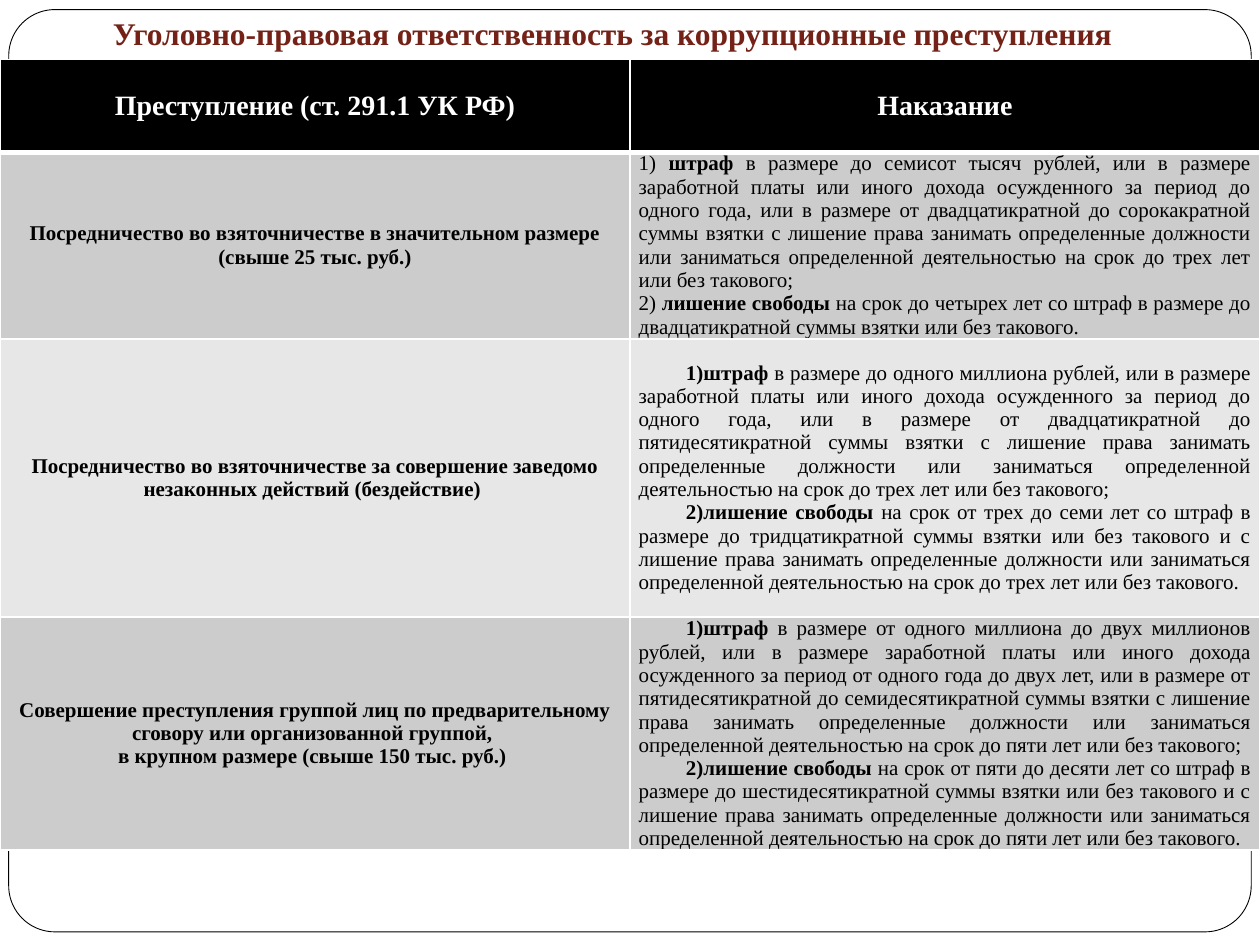
from lxml import etree
from pptx import Presentation
from pptx.dml.color import RGBColor
from pptx.enum.shapes import MSO_SHAPE
from pptx.enum.text import MSO_ANCHOR, PP_ALIGN
from pptx.oxml.ns import qn
from pptx.util import Pt

ROUND = MSO_SHAPE.ROUNDED_RECTANGLE
MIDDLE, BOTTOM = MSO_ANCHOR.MIDDLE, MSO_ANCHOR.BOTTOM
CENTER, JUSTIFY = PP_ALIGN.CENTER, PP_ALIGN.JUSTIFY
FONT = "Times New Roman"
BLACK = RGBColor(0, 0, 0)
WHITE = RGBColor(255, 255, 255)
MAROON = RGBColor(0x74, 0x22, 0x17)
BANDS = [RGBColor(0xCC, 0xCC, 0xCC), RGBColor(0xE7, 0xE7, 0xE7)]

TITLE = "Уголовно-правовая ответственность за коррупционные преступления"
HEADS = ["Преступление (ст. 291.1 УК РФ)", "Наказание"]
HEIGHTS = [53, 103, 159, 129]
BAN = "с лишение права занимать определенные должности или заниматься определенной деятельностью на срок до"
FINE, JAIL = "штраф", "лишение свободы "
ROWS = [
    ("Посредничество во взяточничестве в значительном размере (свыше 25 тыс. руб.)", False,
     " в размере до семисот тысяч рублей, или в размере заработной платы или иного дохода "
     "осужденного за период до одного года, или в размере от двадцатикратной до сорокакратной "
     f"суммы взятки {BAN} трех лет или без такового;",
     "на срок до четырех лет со штраф в размере до двадцатикратной суммы взятки или без такового."),
    ("Посредничество во взяточничестве за совершение заведомо незаконных действий (бездействие) ", True,
     " в размере до одного миллиона рублей, или в размере заработной платы или иного дохода "
     "осужденного за период до одного года, или в размере от двадцатикратной до пятидесятикратной "
     f"суммы взятки {BAN} трех лет или без такового;",
     "на срок от трех до семи лет со штраф в размере до тридцатикратной суммы взятки или без такового "
     f"и {BAN} трех лет или без такового."),
    ("Совершение преступления группой лиц по предварительному сговору или организованной группой, \n"
     "в крупном размере (свыше 150 тыс. руб.) ", True,
     " в размере от одного миллиона до двух миллионов рублей, или в размере заработной платы или иного "
     "дохода осужденного за период от одного года до двух лет, или в размере от пятидесятикратной до "
     f"семидесятикратной суммы взятки {BAN} пяти лет или без такового;",
     "на срок от пяти до десяти лет со штраф в размере до шестидесятикратной суммы взятки или без такового "
     f"и {BAN} пяти лет или без такового."),
]


def style(run, size, color, bold):
    """Set the font of a run."""
    font = run.font
    font.name, font.size, font.bold = FONT, Pt(size), bold
    font.color.rgb = color


def put_line(para, text, size, color):
    """Write a bold centred paragraph."""
    para.text = text
    para.alignment = CENTER
    for run in para.runs:
        style(run, size, color, True)


def number(para):
    """Give a paragraph an automatic number and a first-line indent."""
    props = para._p.get_or_add_pPr()
    props.set("marL", "0")
    props.set("indent", str(Pt(27)))
    etree.SubElement(props, qn("a:buFont")).set("typeface", "+mj-lt")
    etree.SubElement(props, qn("a:buAutoNum")).set("type", "arabicParenR")


def put_terms(frame, auto, parts):
    """Write the numbered penalties, each led by its bold name."""
    for i, (name, rest) in enumerate(parts):
        para = frame.add_paragraph() if i else frame.paragraphs[0]
        para.alignment = JUSTIFY
        if auto:
            number(para)
        lead = "" if auto else f"{i + 1}) "
        for text, bold in ((lead, False), (name, True), (rest, False)):
            if text:
                run = para.add_run()
                run.text = text
                style(run, 12, BLACK, bold)


def dress(cell, fill, top, base):
    """Give a cell white borders, a fill and middle anchoring."""
    props = cell._tc.get_or_add_tcPr()
    for side, width in (("L", 1), ("R", 1), ("T", top), ("B", base)):
        line = etree.SubElement(props, qn(f"a:ln{side}"), w=str(Pt(width)))
        paint = etree.SubElement(line, qn("a:solidFill"))
        etree.SubElement(paint, qn("a:srgbClr")).set("val", str(WHITE))
    cell.fill.solid()
    cell.fill.fore_color.rgb = fill
    cell.vertical_anchor = MIDDLE


def add_frame(slide, x, y, w, h):
    """Draw the rounded outline behind the content."""
    frame = slide.shapes.add_shape(ROUND, Pt(x), Pt(y), Pt(w), Pt(h))
    frame.adjustments[0] = 0.05
    frame.shadow.inherit = False
    frame.fill.solid()
    frame.fill.fore_color.rgb = WHITE
    frame.line.color.rgb = BLACK
    frame.line.width = Pt(0.5)


def add_title(slide, x, y, w, h):
    """Place the heading at the foot of its box."""
    frame = slide.shapes.add_textbox(Pt(x), Pt(y), Pt(w), Pt(h)).text_frame
    frame.word_wrap = True
    frame.vertical_anchor = BOTTOM
    frame.margin_bottom = Pt(7.2)
    put_line(frame.paragraphs[0], TITLE, 18, MAROON)


def add_grid(slide, x, y, w):
    """Build the table of crimes and penalties."""
    grid = slide.shapes.add_table(len(HEIGHTS), 2, Pt(x), Pt(y), Pt(w), Pt(sum(HEIGHTS))).table
    grid.horz_banding = False
    for row, height in zip(grid.rows, HEIGHTS):
        row.height = Pt(height)
    for col, text in enumerate(HEADS):
        cell = grid.cell(0, col)
        dress(cell, BLACK, 1, 3)
        put_line(cell.text_frame.paragraphs[0], text, 16, WHITE)
    for i, (crime, auto, fine, jail) in enumerate(ROWS):
        left, right = grid.cell(i + 1, 0), grid.cell(i + 1, 1)
        for cell in (left, right):
            dress(cell, BANDS[i % 2], 1 if i else 3, 1)
            cell.margin_left = cell.margin_right = Pt(5)
            cell.margin_top = cell.margin_bottom = 0
        put_line(left.text_frame.paragraphs[0], crime, 12, BLACK)
        put_terms(right.text_frame, auto, ((FINE, fine), (JAIL, jail)))


def main():
    """Build the slide and save it."""
    deck = Presentation()
    deck.slide_width, deck.slide_height = Pt(720), Pt(540)
    slide = deck.slides.add_slide(deck.slide_layouts[6])
    add_frame(slide, 5, 5.5, 710, 527)
    add_grid(slide, 0, 34, 720)
    add_title(slide, 28, 0, 644, 37)
    deck.save("out.pptx")


if __name__ == "__main__":
    main()
